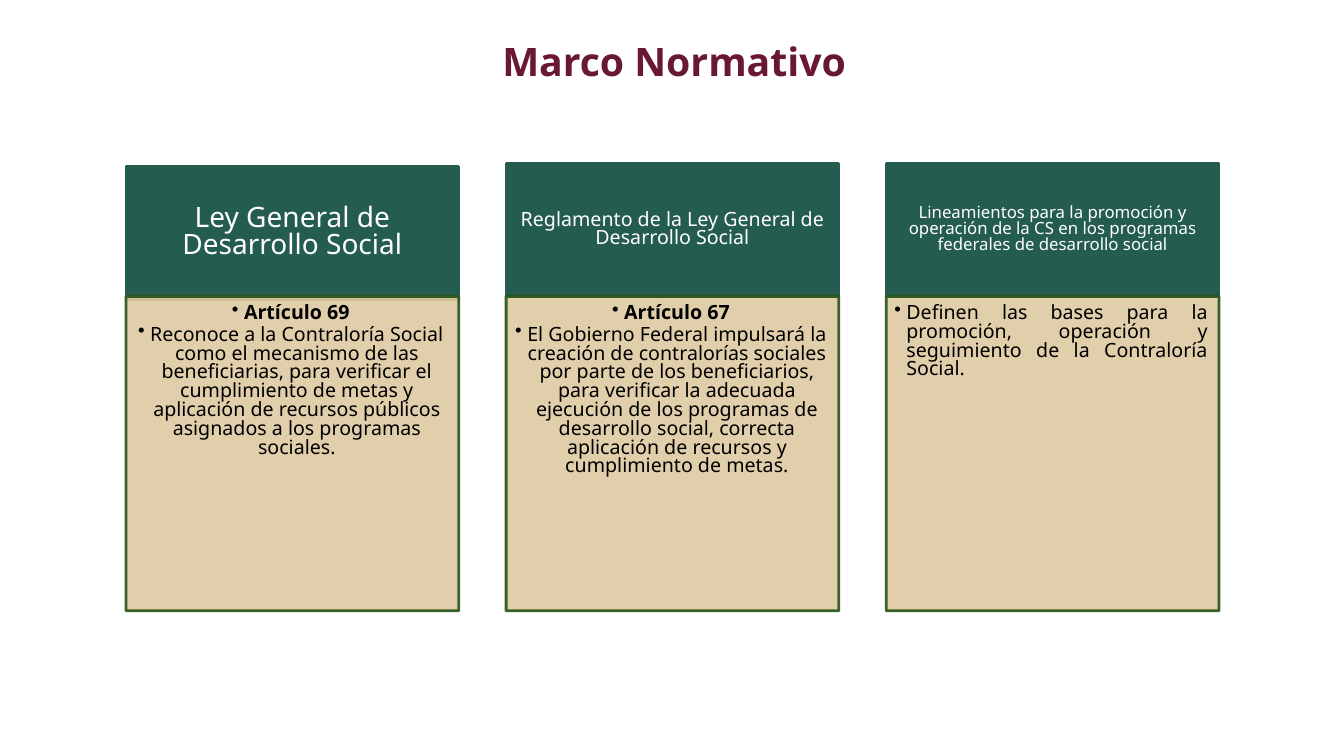
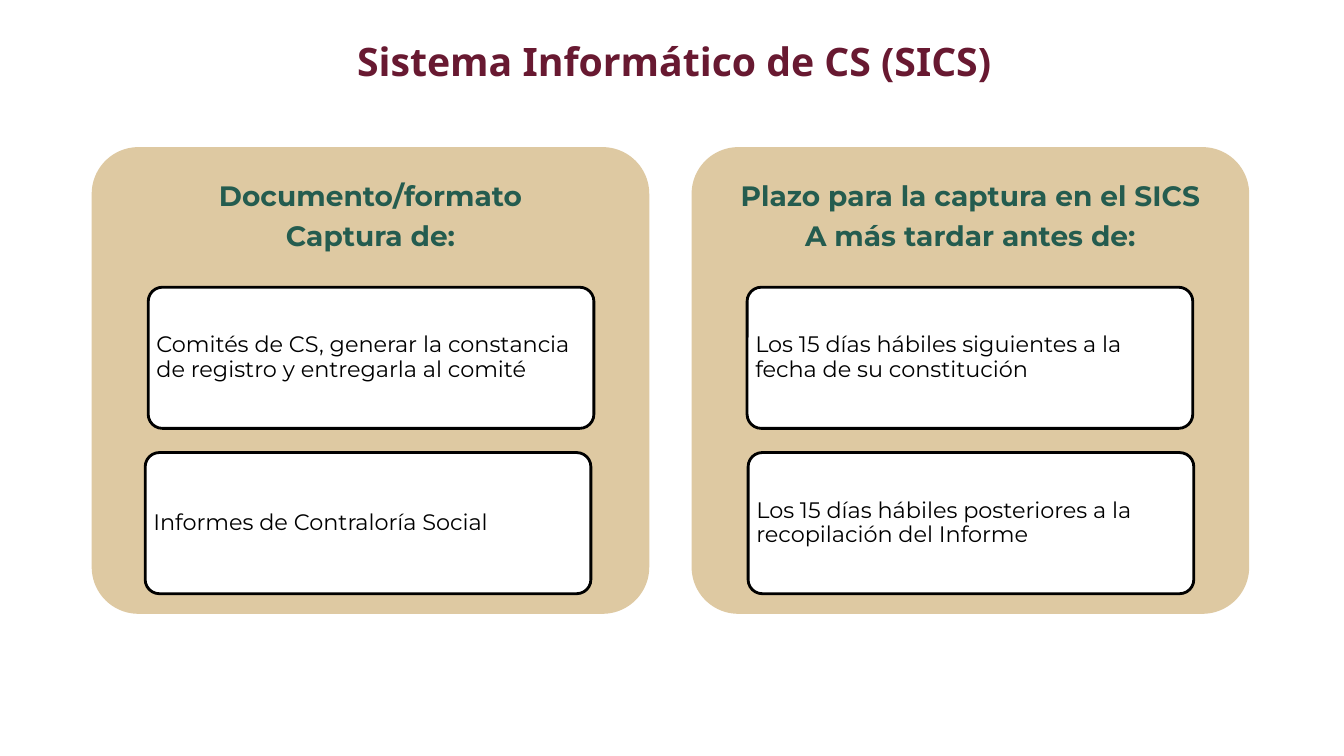
from lxml import etree
from pptx import Presentation
from pptx.dml.color import RGBColor
from pptx.enum.shapes import MSO_SHAPE
from pptx.enum.text import MSO_ANCHOR, PP_ALIGN
from pptx.oxml.ns import qn
from pptx.util import Inches, Pt

RECTANGLE, ROUNDED = MSO_SHAPE.RECTANGLE, MSO_SHAPE.ROUNDED_RECTANGLE
TOP, MIDDLE = MSO_ANCHOR.TOP, MSO_ANCHOR.MIDDLE
LEFT, CENTER, JUSTIFY = PP_ALIGN.LEFT, PP_ALIGN.CENTER, PP_ALIGN.JUSTIFY

WINE, GREEN, DARK_GREEN = "681931", "245C4F", "275417"
SAND, WHITE, BLACK = "DEC9A2", "FFFFFF", "000000"
SANS, DISPLAY = "Noto Sans", "Montserrat"
TITLE_LAYOUT = 5

LAWS = [
    ("Ley General de Desarrollo Social", 1.65, 20, CENTER, [
        ("Artículo 69", True),
        ("Reconoce a la Contraloría Social como el mecanismo de las beneficiarias, "
         "para verificar el cumplimiento de metas y aplicación de recursos públicos "
         "asignados a los programas sociales.", False)]),
    ("Reglamento de la Ley General de Desarrollo Social", 1.62, 14, CENTER, [
        ("Artículo 67", True),
        ("El Gobierno Federal impulsará la creación de contralorías sociales por parte "
         "de los beneficiarios, para verificar la adecuada ejecución de los programas de "
         "desarrollo social, correcta aplicación de recursos y cumplimiento de metas.",
         False)]),
    ("Lineamientos para la promoción y operación de la CS en los programas federales "
     "de desarrollo social", 1.62, 12, JUSTIFY, [
        ("Definen las bases para la promoción, operación y seguimiento de la "
         "Contraloría Social.", False)]),
]

PANELS = [
    (0.91, ["Documento/formato", "Captura de:"], [
        (1.47, "Comités de CS, generar la constancia de registro y entregarla al comité"),
        (1.44, "Informes de Contraloría Social")]),
    (6.86, ["Plazo para la captura en el SICS", "A más tardar antes de:"], [
        (7.41, "Los 15 días hábiles siguientes a la fecha de su constitución"),
        (7.42, "Los 15 días hábiles posteriores a la recopilación del Informe")]),
]


def color(value):
    return RGBColor.from_string(value)


def set_alpha(fill_parent, percent):
    for element in fill_parent.iter(qn("a:srgbClr")):
        etree.SubElement(element, qn("a:alpha")).set("val", str(percent * 1000))


def set_frame(shape, anchor, insets):
    frame = shape.text_frame
    frame.word_wrap = True
    frame.vertical_anchor = anchor
    (frame.margin_left, frame.margin_top,
     frame.margin_right, frame.margin_bottom) = map(Inches, insets)


def add_bullet(paragraph, indent=0.12):
    properties = paragraph._p.get_or_add_pPr()
    properties.set("marL", str(Inches(indent)))
    properties.set("indent", str(-Inches(indent)))
    bullet_color = etree.SubElement(properties, qn("a:buClr"))
    etree.SubElement(bullet_color, qn("a:srgbClr")).set("val", BLACK)
    etree.SubElement(properties, qn("a:buChar")).set("char", "•")


def write(shape, lines, font, size, text_color, align, spacing, after, bullets=False):
    frame = shape.text_frame
    for index, (text, bold) in enumerate(lines):
        paragraph = frame.add_paragraph() if index else frame.paragraphs[0]
        paragraph.text = text
        paragraph.alignment = align
        paragraph.line_spacing = spacing
        paragraph.space_after = Pt(after * size)
        if bullets:
            add_bullet(paragraph)
        paragraph.font.name = font
        paragraph.font.size = Pt(size)
        paragraph.font.bold = bold
        paragraph.font.color.rgb = color(text_color)


def add_box(slide, kind, position, fill, line=None):
    shape = slide.shapes.add_shape(kind, *map(Inches, position))
    shape.shadow.inherit = False
    shape.fill.solid()
    shape.fill.fore_color.rgb = color(fill)
    if line:
        shape.line.color.rgb = color(line)
        shape.line.width = Pt(2)
    else:
        shape.line.fill.background()
    if kind == ROUNDED:
        shape.adjustments[0] = 0.1
    return shape


def add_titled_slide(presentation, text):
    slide = presentation.slides.add_slide(presentation.slide_layouts[TITLE_LAYOUT])
    title = slide.shapes.title
    title.left, title.top, title.width, title.height = map(Inches, (2.75, 0.24, 7.87, 0.72))
    set_frame(title, MIDDLE, (0.1, 0.05, 0.1, 0.05))
    write(title, [(text, True)], SANS, 28, WINE, CENTER, 1.0, 0)
    return slide


def add_law(slide, left, law):
    name, top, size, align, points = law
    header = add_box(slide, RECTANGLE, (left, top, 3.3, 1.32), GREEN, GREEN)
    side = size * 0.008
    set_frame(header, MIDDLE, (side, 0.06, side, 0.06))
    write(header, [(name, False)], SANS, size, WHITE, CENTER, 0.8, 0.35)

    body = add_box(slide, RECTANGLE, (left, 2.94, 3.3, 3.12), SAND, DARK_GREEN)
    set_alpha(body._element.spPr, 90)
    set_frame(body, TOP, (0.08, 0.08, 0.11, 0.12))
    write(body, points, SANS, 14, BLACK, align, 0.8, 0.15, bullets=True)


def add_panel(slide, left, heading, cards):
    panel = add_box(slide, ROUNDED, (left, 1.46, 5.53, 4.63), SAND)
    set_frame(panel, MIDDLE, (0, 0, 0, 3.24))
    write(panel, [(line, True) for line in heading], DISPLAY, 20, GREEN, CENTER, 0.9, 0.35)
    for row, (card_left, text) in enumerate(cards):
        card = add_box(slide, ROUNDED, (card_left, 2.85 + row * 1.64, 4.42, 1.4), WHITE, BLACK)
        set_frame(card, MIDDLE, (0.04, 0.03, 0.04, 0.03))
        write(card, [(text, False)], DISPLAY, 16, BLACK, LEFT, 0.9, 0.35)


def main():
    presentation = Presentation()
    presentation.slide_width = Inches(13.33)
    presentation.slide_height = Inches(7.5)

    slide = add_titled_slide(presentation, "Marco Normativo")
    for column, law in enumerate(LAWS):
        add_law(slide, 1.25 + column * 3.77, law)

    slide = add_titled_slide(presentation, "Sistema Informático de CS (SICS)")
    for left, heading, cards in PANELS:
        add_panel(slide, left, heading, cards)

    presentation.save("out.pptx")


if __name__ == "__main__":
    main()
